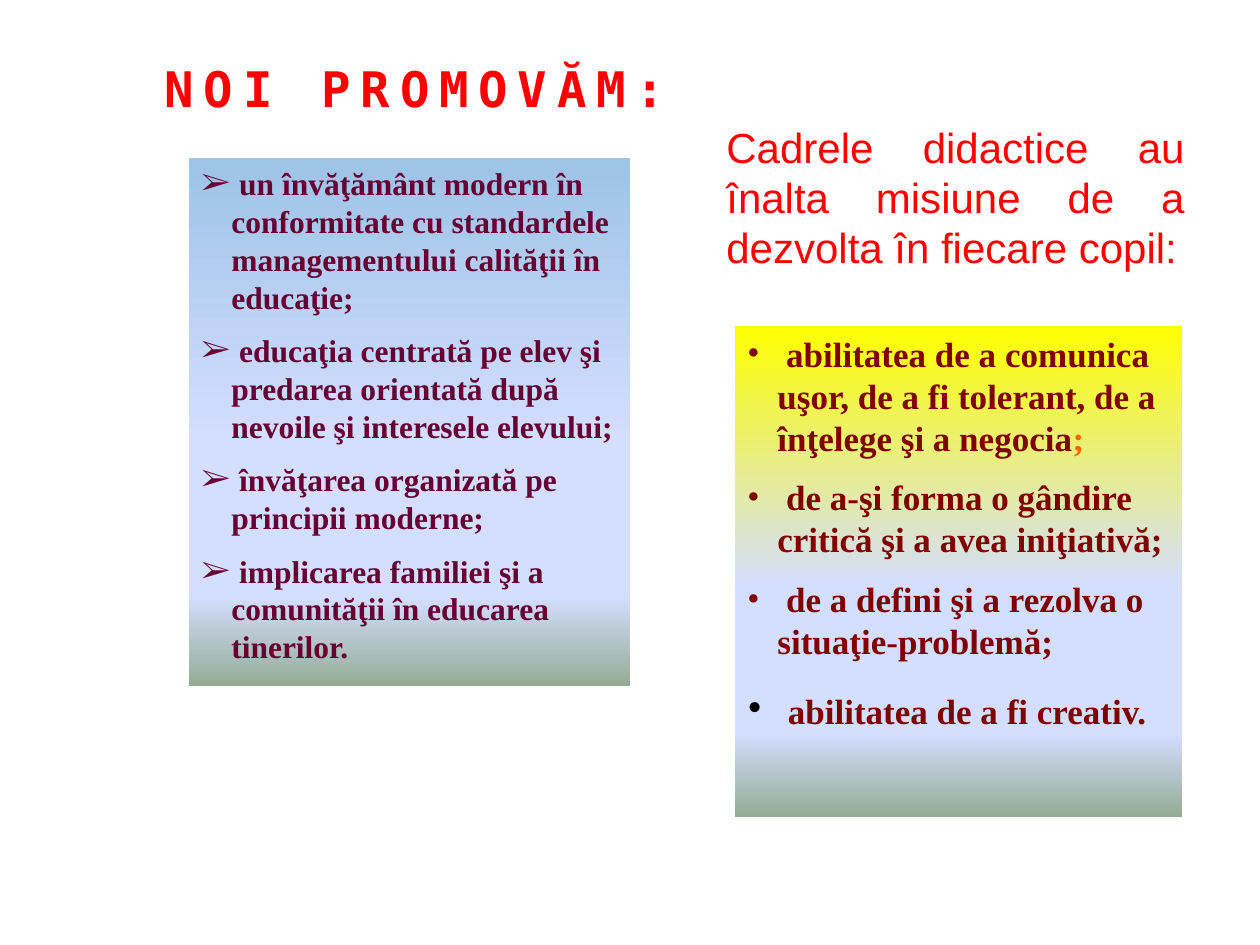
from pptx import Presentation
from pptx.dml.color import RGBColor as RGB
from pptx.enum.shapes import MSO_SHAPE as Shape
from pptx.enum.text import MSO_ANCHOR as Anchor, PP_ALIGN as Align
from pptx.oxml import parse_xml
from pptx.oxml.ns import nsdecls
from pptx.util import Pt

TITLE = "NOI PROMOVĂM:"
LEAD = "Cadrele didactice au înalta misiune de a dezvolta în fiecare copil:"
GOALS = [
    " un învăţământ modern în conformitate cu standardele managementului calităţii în educaţie;",
    " educaţia centrată pe elev şi predarea orientată după nevoile şi interesele elevului;",
    " învăţarea organizată pe principii moderne;",
    " implicarea familiei şi a comunităţii în educarea tinerilor.",
]
SKILLS = [
    [" abilitatea de a comunica uşor, de a fi tolerant, de a înţelege şi a negocia", (";", "mark")],
    " de a-şi forma o gândire critică şi a avea iniţiativă;",
    " de a defini şi a rezolva o situaţie-problemă;",
    [(" ", "gap"), "abilitatea de a fi creativ."],
]
THEME = {
    "title": dict(size=28, font="DejaVu Sans Mono", color="FF0000", bold=True, track=560),
    "lead": dict(size=24, font="Arial", color="FF0000", bold=False),
    "goal": dict(size=18, font="Times New Roman", color="660033", bold=True),
    "skill": dict(size=20, font="Times New Roman", color="800000", bold=True),
    "mark": dict(color="FF6600"),
    "gap": dict(size=24, color="000000", bold=False),
    "blue": "9DC3E6",
    "gold": "FFFF00",
    "fade": [(53, "D4DEFF"), (83, "D4DEFF"), (100, "96AB94")],
}
LISTS = [
    ((735, 326, 447, 491), "gold", SKILLS, "skill", "•"),
    ((189, 158, 441, 528), "blue", GOALS, "goal", "➢"),
]
UNIT = 914400 / 126
HANG = 30


def px(n):
    return round(n * UNIT)


def write(shape, paras, look, align=Align.LEFT, bullet=None):
    frame = shape.text_frame
    frame.word_wrap = True
    frame.vertical_anchor = Anchor.TOP
    for i, parts in enumerate(paras):
        para = frame.paragraphs[0] if i == 0 else frame.add_paragraph()
        para.alignment = align
        parts = [parts] if isinstance(parts, str) else parts
        runs = [(part, look) if isinstance(part, str) else part for part in parts]
        if bullet:
            props = para._p.get_or_add_pPr()
            props.set("marL", str(px(HANG)))
            props.set("indent", str(-px(HANG)))
            face = THEME[look]["font"]
            props.append(parse_xml(f'<a:buFont {nsdecls("a")} typeface="{face}"/>'))
            props.append(parse_xml(f'<a:buChar {nsdecls("a")} char="{bullet}"/>'))
            if i:
                first = {**THEME[look], **THEME[runs[0][1]]}
                para.space_before = Pt(first["size"] / 2)
        for text, name in runs:
            kind = {**THEME[look], **THEME[name]}
            run = para.add_run()
            run.text = text
            font = run.font
            font.size, font.name, font.bold = Pt(kind["size"]), kind["font"], kind["bold"]
            font.color.rgb = RGB.from_string(kind["color"])
            if "track" in kind:
                run._r.get_or_add_rPr().set("spc", str(kind["track"]))


def shade(shape, top):
    stops = "".join(
        f'<a:gs pos="{pos * 1000}"><a:srgbClr val="{tone}"/></a:gs>'
        for pos, tone in [(0, top), *THEME["fade"]]
    )
    shape.fill.gradient()
    grad = shape._element.spPr.find(".//{*}gradFill")
    grad.getparent().replace(grad, parse_xml(
        f'<a:gradFill {nsdecls("a")} rotWithShape="1"><a:gsLst>{stops}</a:gsLst>'
        '<a:lin ang="5400000" scaled="0"/></a:gradFill>'
    ))


deck = Presentation()
deck.slide_width, deck.slide_height = px(1260), px(945)
slide = deck.slides.add_slide(deck.slide_layouts[5])

title = slide.shapes.title
title.left, title.top, title.width, title.height = map(px, (130, 52, 570, 59))
write(title, [TITLE], "title", align=Align.CENTER)

for area, top, items, look, bullet in LISTS:
    panel = slide.shapes.add_shape(Shape.RECTANGLE, *map(px, area))
    panel.shadow.inherit = False
    panel.line.fill.background()
    shade(panel, THEME[top])
    write(panel, items, look, bullet=bullet)

lead = slide.shapes.add_textbox(*map(px, (714, 115, 483, 165)))
write(lead, [LEAD], "lead", align=Align.JUSTIFY)

deck.save("out.pptx")
